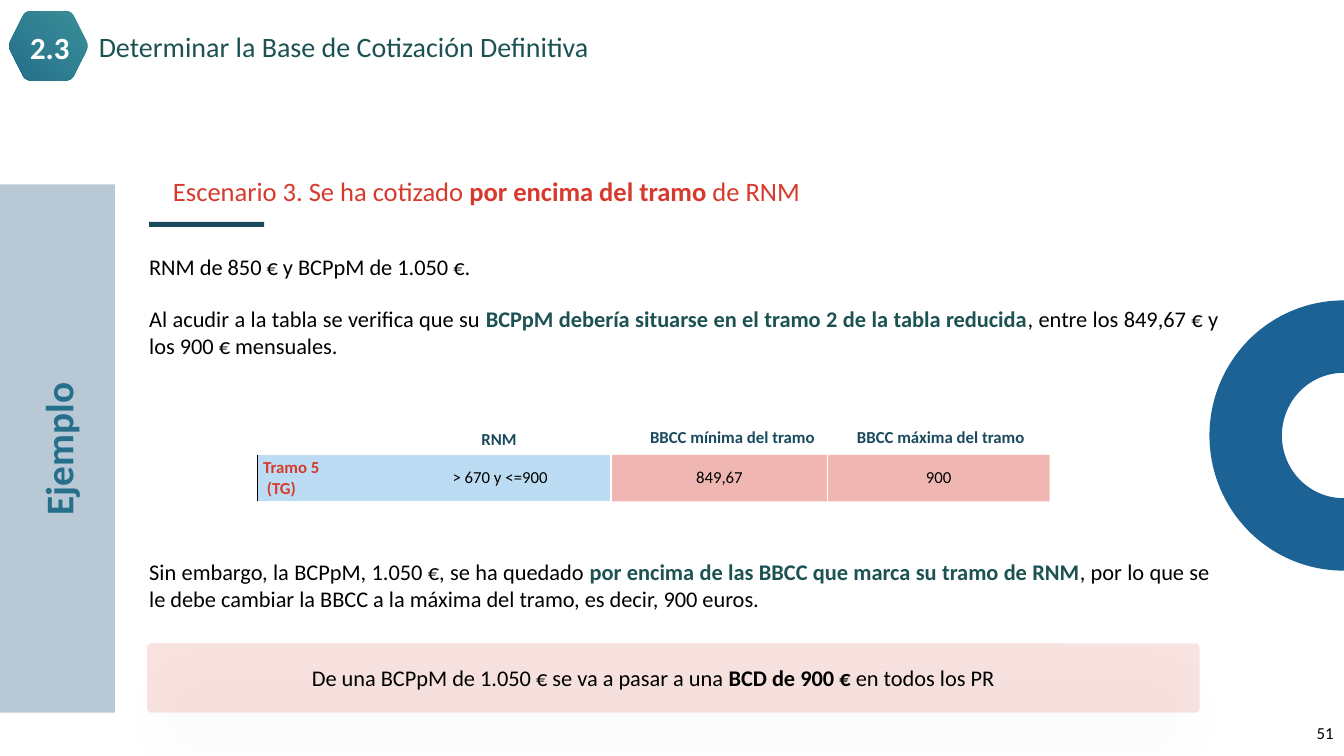
import pptx
import pptx.util
import pptx.dml.color
import pptx.enum.shapes
import pptx.enum.text
import pptx.oxml
import pptx.oxml.ns
from pptx.util import Cm

SHAPE = pptx.enum.shapes.MSO_SHAPE
ALIGN = pptx.enum.text.PP_ALIGN
MIDDLE = pptx.enum.text.MSO_ANCHOR.MIDDLE
NAMESPACE = pptx.oxml.ns.nsdecls("a")
BLACK, NAVY, GREEN, RED, TEAL = "000000", "194A5D", "1D5253", "D73A2C", "266F8B"


def paint(target, color, alpha=100):
    """Give a shape or an empty cell a solid fill, optionally transparent."""
    target.fill.solid()
    target.fill.fore_color.rgb = pptx.dml.color.RGBColor.from_string(color)
    if alpha < 100:
        element = target._tc if hasattr(target, "_tc") else target._element
        for node in element.iter(pptx.oxml.ns.qn("a:srgbClr")):
            node.append(pptx.oxml.parse_xml(f'<a:alpha {NAMESPACE} val="{alpha * 1000}"/>'))


def write(frame, paragraphs, size, color=BLACK, align=ALIGN.LEFT, bold=False, accent=None, gap=0):
    """Fill a text frame; in each paragraph every second piece is emphasised."""
    frame.word_wrap = True
    for index, pieces in enumerate(paragraphs):
        para = frame.paragraphs[0] if index == 0 else frame.add_paragraph()
        para.alignment = align
        if index:
            para.space_before = pptx.util.Pt(gap)
        para.font.name = "Calibri"
        para.font.size = pptx.util.Pt(size)
        para.font.bold = bold
        para.font.color.rgb = pptx.dml.color.RGBColor.from_string(color)
        for position, piece in enumerate(pieces):
            span = para.add_run()
            span.text = piece
            if position % 2:
                span.font.bold = True
                if accent:
                    span.font.color.rgb = pptx.dml.color.RGBColor.from_string(accent)


deck = pptx.Presentation()
deck.slide_width, deck.slide_height = Cm(33.87), Cm(19.05)
page = deck.slides.add_slide(deck.slide_layouts[6])

# Solid shapes: underline, ring, conclusion band, side panel
shapes = [
    (SHAPE.RECTANGLE, 3.76, 5.59, 2.9, 0.13, NAVY, 100, None),
    (SHAPE.DONUT, 30.48, 7.57, 6.76, 6.81, "1C6294", 100, 0.27),
    (SHAPE.ROUNDED_RECTANGLE, 3.71, 16.21, 26.52, 1.75, RED, 14, 0.058),
    (SHAPE.RECTANGLE, 0, 4.65, 2.9, 13.31, "164C74", 30, None),
]
for kind, left, top, width, height, color, alpha, adjustment in shapes:
    shape = page.shapes.add_shape(kind, Cm(left), Cm(top), Cm(width), Cm(height))
    shape.shadow.inherit = False
    shape.line.fill.background()
    paint(shape, color, alpha)
    if adjustment:
        shape.adjustments[0] = adjustment
    if kind == SHAPE.ROUNDED_RECTANGLE:
        effects = shape._element.spPr.find(pptx.oxml.ns.qn("a:effectLst"))
        effects.append(pptx.oxml.parse_xml(
            f'<a:outerShdw {NAMESPACE} blurRad="508000" dist="330200" dir="5400000" sx="96000" '
            'algn="ctr" rotWithShape="0"><a:srgbClr val="000000"><a:alpha val="15000"/>'
            '</a:srgbClr></a:outerShdw>'))

# Section badge: hexagon with rounded corners
corners = [(0.64, 0.28), (1.8, 0.28), (2.24, 1.16), (1.8, 2.03), (0.64, 2.03), (0.2, 1.16)]
outline = []
for index, (x, y) in enumerate(corners):
    ends = []
    for other_x, other_y in (corners[index - 1], corners[(index + 1) % 6]):
        share = 0.15 / ((other_x - x) ** 2 + (other_y - y) ** 2) ** 0.5
        ends.append((x + share * (other_x - x), y + share * (other_y - y)))
    for step in range(6):
        t = step / 5
        outline.append(tuple(
            Cm((1 - t) ** 2 * start + 2 * t * (1 - t) * middle + t ** 2 * end)
            for start, middle, end in zip(ends[0], (x, y), ends[1])))
builder = page.shapes.build_freeform(*outline[0], scale=1.0)
builder.add_line_segments(outline[1:], close=True)
badge = builder.convert_to_shape()
badge.shadow.inherit = False
badge.line.fill.background()
badge.fill.gradient()
for stop, color in zip(badge.fill.gradient_stops, (TEAL, "398F98")):
    stop.color.rgb = pptx.dml.color.RGBColor.from_string(color)
linear = badge._element.spPr.find(".//" + pptx.oxml.ns.qn("a:lin"))
linear.getparent().replace(linear, pptx.oxml.parse_xml(
    f'<a:path {NAMESPACE} path="circle"><a:fillToRect t="100000" r="100000"/></a:path>'))

# Text with default insets: page number, column headings, titles
headings = [
    (26.24, 17.96, 7.62, 1.02, ["51"], 12, BLACK, ALIGN.RIGHT, False),
    (8.97, 10.67, 7.21, 0.76, ["RNM"], 12, NAVY, ALIGN.CENTER, True),
    (15.88, 10.64, 5.16, 0.76, ["BBCC mínima del tramo"], 12, NAVY, ALIGN.CENTER, True),
    (20.98, 10.64, 5.46, 0.76, ["BBCC máxima del tramo"], 12, NAVY, ALIGN.CENTER, True),
    (4.11, 4.29, 24.69, 1.07, ["Escenario 3. Se ha cotizado ", "por encima del tramo ", "de RNM"],
     19, RED, ALIGN.LEFT, False),
    (2.24, 0.76, 29.41, 0.99, ["Determinar la Base de Cotización Definitiva"],
     20, GREEN, ALIGN.LEFT, False),
    (0.43, 0.89, 1.65, 0.76, ["2.3"], 22, "FFFFFF", ALIGN.CENTER, True),
]
for left, top, width, height, pieces, size, color, align, bold in headings:
    box = page.shapes.add_textbox(Cm(left), Cm(top), Cm(width), Cm(height))
    write(box.text_frame, [pieces], size, color, align, bold)
    if size == 12 and not bold:
        box.text_frame.vertical_anchor = MIDDLE
    if size == 20:
        box.text_frame.paragraphs[0].line_spacing = 0.85
    if size == 22:
        box.text_frame.margin_top = box.text_frame.margin_bottom = 0
        box.text_frame.vertical_anchor = MIDDLE
        box.text_frame.paragraphs[0].line_spacing = 0.8

# Text without insets: explanations, conclusion, side label
explanations = [
    (3.76, 6.38, 26.95, 2.69, [
        ["RNM de 850 € y BCPpM de 1.050 €."],
        ["Al acudir a la tabla se verifica que su ",
         "BCPpM debería situarse en el tramo 2 de la tabla reducida",
         ", entre los 849,67 € y los 900 € mensuales."]], 16, BLACK, ALIGN.JUSTIFY, False, GREEN, 0),
    (3.76, 14.07, 26.72, 1.37, [
        ["Sin embargo, la BCPpM, 1.050 €, se ha quedado ",
         "por encima de las BBCC que marca su tramo de RNM",
         ", por lo que se le debe cambiar la BBCC a la máxima del tramo, es decir, 900 euros."]],
     16, BLACK, ALIGN.JUSTIFY, False, GREEN, 0),
    (5.64, 16.74, 21.64, 0.69, [
        ["De una BCPpM de 1.050 € se va a pasar a una ", "BCD de 900 € ", "en todos los PR"]],
     16, BLACK, ALIGN.CENTER, False, None, 0),
    (-0.79, 10.72, 4.5, 1.19, [["Ejemplo"]], 28, TEAL, ALIGN.CENTER, True, None, 270),
]
for left, top, width, height, paragraphs, size, color, align, bold, accent, turn in explanations:
    box = page.shapes.add_textbox(Cm(left), Cm(top), Cm(width), Cm(height))
    box.rotation = turn
    frame = box.text_frame
    frame.margin_left = frame.margin_right = frame.margin_top = frame.margin_bottom = 0
    write(frame, paragraphs, size, color, align, bold, accent, gap=18)

# Bracket table: text, width, fill, fill opacity, left and right border colours
cells = [
    ([["Tramo 5"], [" (TG)"]], 3.33, "BCDCF3", 100, BLACK, None),
    ([["> 670 y <=900"]], 5.59, "BCDCF3", 100, None, "FFFFFF"),
    ([["849,67"]], 5.46, RED, 36, "FFFFFF", "FFFFFF"),
    ([["900"]], 5.59, RED, 36, "FFFFFF", None),
]
table = page.shapes.add_table(1, 4, Cm(6.48), Cm(11.46), Cm(19.97), Cm(1.17)).table
table.first_row = table.horz_banding = False
for column, (paragraphs, width, color, alpha, left_line, right_line) in enumerate(cells):
    table.columns[column].width = Cm(width)
    cell = table.cell(0, column)
    cell.vertical_anchor = MIDDLE
    cell.margin_left = cell.margin_right = Cm(0.15)
    cell.margin_top = cell.margin_bottom = Cm(0.08)
    paint(cell, color, alpha)
    first = column == 0
    write(cell.text_frame, paragraphs, 12, RED if first else BLACK,
          ALIGN.LEFT if first else ALIGN.CENTER, first)
    borders = (("lnL", left_line), ("lnR", right_line), ("lnT", None), ("lnB", None))
    for index, (side, line) in enumerate(borders):
        ink = f'<a:solidFill><a:srgbClr val="{line}"/></a:solidFill>' if line else "<a:noFill/>"
        cell._tc.get_or_add_tcPr().insert(index, pptx.oxml.parse_xml(
            f'<a:{side} {NAMESPACE} w="12700">{ink}</a:{side}>'))

deck.save("out.pptx")
